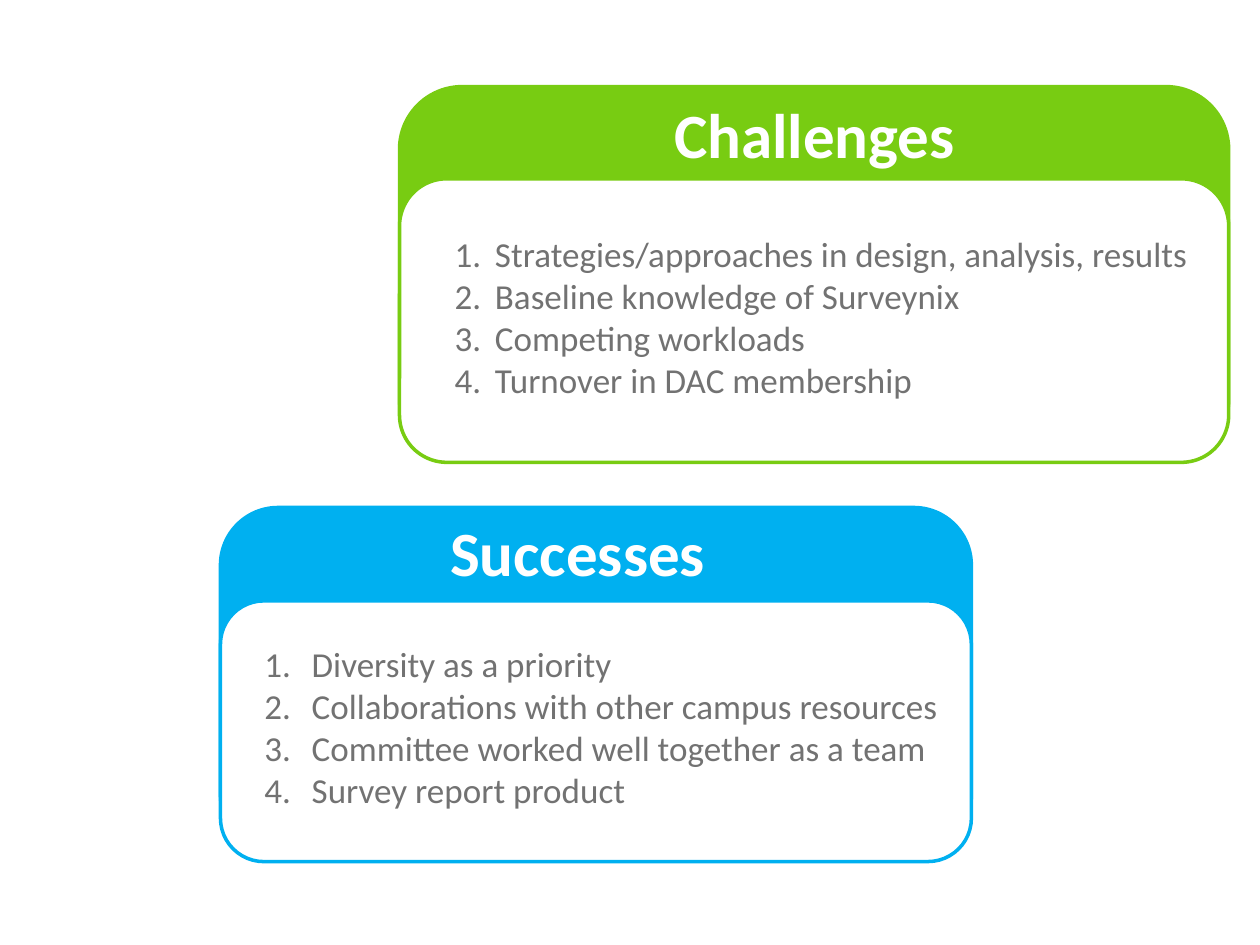
import pptx
import pptx.dml.color
import pptx.enum.shapes
import pptx.enum.text
import pptx.oxml.ns
import pptx.util
from dataclasses import dataclass
from lxml import etree

Pt = pptx.util.Pt
RGB = pptx.dml.color.RGBColor.from_string
ALIGN = pptx.enum.text.PP_ALIGN


@dataclass(frozen=True)
class Theme:
    font: str = "Calibri"
    heading_size: int = 36
    item_size: int = 20
    border: int = 2
    white: str = "FFFFFF"
    text: str = "727272"
    green: str = "78CC12"
    blue: str = "00B0F0"


THEME = Theme()


def add_panel(group, box, fill, accent):
    panel = group.shapes.add_shape(
        pptx.enum.shapes.MSO_SHAPE.ROUNDED_RECTANGLE, *map(Pt, box))
    panel.shadow.inherit = False
    panel.fill.solid()
    panel.fill.fore_color.rgb = RGB(fill)
    panel.line.color.rgb = RGB(accent)
    panel.line.width = Pt(THEME.border)


def number_paragraph(paragraph, indent):
    properties = paragraph._p.get_or_add_pPr()
    properties.set("marL", str(Pt(indent)))
    properties.set("indent", str(-Pt(indent)))
    numbering = etree.SubElement(properties, pptx.oxml.ns.qn("a:buAutoNum"))
    numbering.set("type", "arabicPeriod")


def add_text(group, box, lines, size, color, bold=False, align=ALIGN.LEFT, indent=0):
    frame = group.shapes.add_textbox(*map(Pt, box)).text_frame
    frame.word_wrap = True
    frame.text = "\n".join(lines)
    for paragraph in frame.paragraphs:
        if indent:
            number_paragraph(paragraph, indent)
        paragraph.alignment = align
        paragraph.font.name = THEME.font
        paragraph.font.size = Pt(size)
        paragraph.font.bold = bold
        paragraph.font.color.rgb = RGB(color)


def add_card(slide, box, accent, body, heading, heading_box, heading_align,
             items, items_box, indent):
    left, top, width, height = box

    def within(part):
        return left + part[0], top + part[1], part[2], part[3]

    group = slide.shapes.add_group_shape()
    add_panel(group, box, accent, accent)
    body_top, body_height = body
    add_panel(group, within((0, body_top, width, body_height)), THEME.white, accent)
    add_text(group, within(heading_box), [heading], THEME.heading_size,
             THEME.white, bold=True, align=heading_align)
    add_text(group, within(items_box), items, THEME.item_size,
             THEME.text, indent=indent)


def main():
    deck = pptx.Presentation()
    deck.slide_width, deck.slide_height = Pt(720), Pt(540)
    slide = deck.slides.add_slide(deck.slide_layouts[6])
    add_card(
        slide, (228.3, 49.5, 473.8, 214.5), THEME.green, body=(52.7, 162),
        heading="Challenges", heading_box=(149.8, 1.5, 306, 51),
        heading_align=ALIGN.LEFT,
        items=["Strategies/approaches in design, analysis, results",
               "Baseline knowledge of Surveynix",
               "Competing workloads",
               "Turnover in DAC membership"],
        items_box=(24.5, 80, 467.2, 104.4), indent=23)
    add_card(
        slide, (126, 290, 429.1, 197.3), THEME.blue, body=(53.4, 149),
        heading="Successes", heading_box=(0, 0, 408.2, 67.7),
        heading_align=ALIGN.CENTER,
        items=["Diversity as a priority",
               "Collaborations with other campus resources",
               "Committee worked well together as a team",
               "Survey report product"],
        items_box=(18, 73.6, 426.2, 126), indent=27)
    deck.save("out.pptx")


if __name__ == "__main__":
    main()
